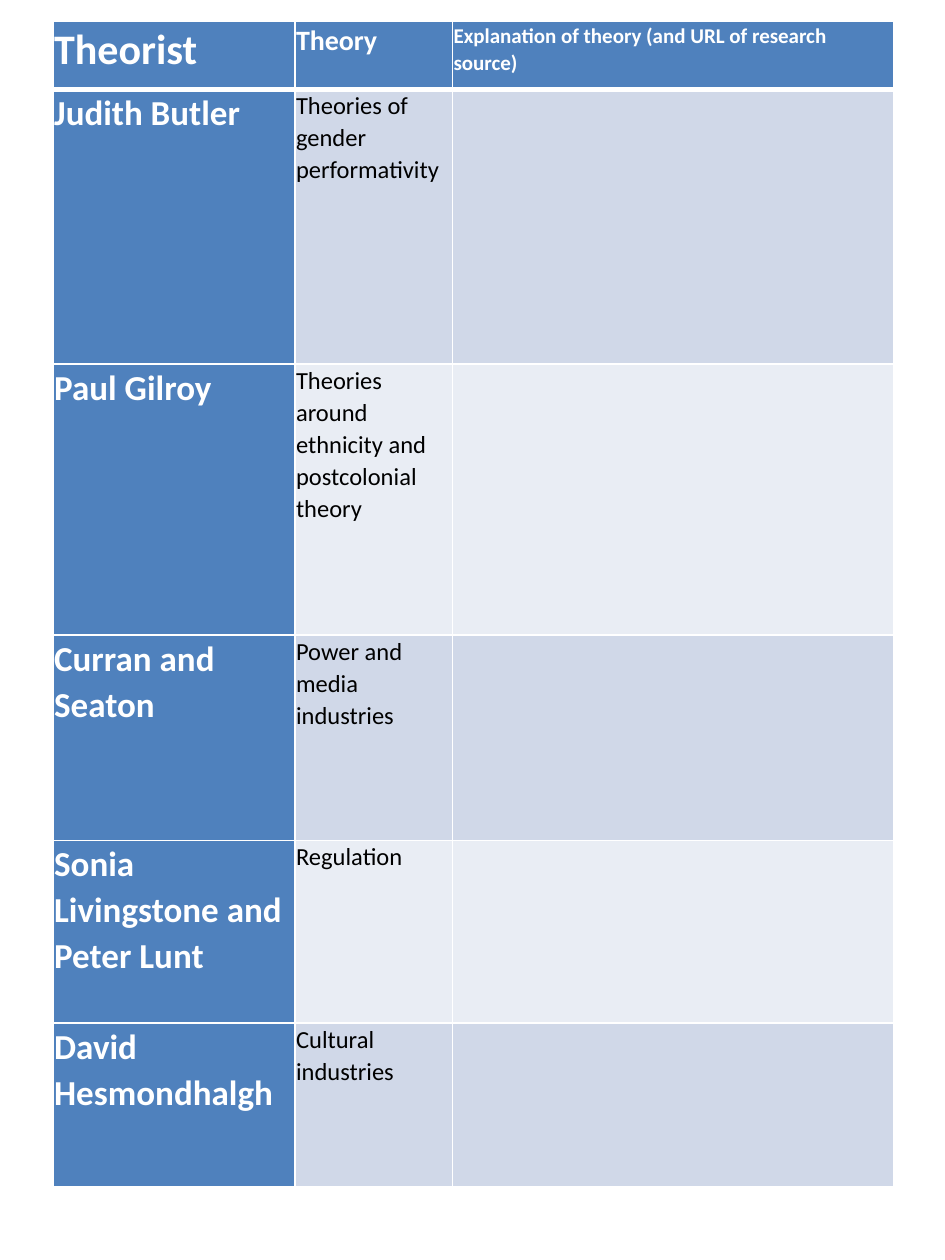
"""Build a one-slide table of media theorists and their theories."""
from dataclasses import dataclass

from lxml import etree
from pptx import Presentation
from pptx import util as u
from pptx.dml.color import RGBColor
from pptx.oxml.ns import qn

PX = 9144
WHITE, BLACK, BLUE = "FFFFFF", "000000", "4F81BD"
BANDS = ("D0D8E8", "E9EDF4")
COLUMN_WIDTHS = (192, 125, 350)


@dataclass(frozen=True)
class Style:
    """Look of the text in a cell."""
    size: int
    color: str = WHITE
    bold: bool = True


@dataclass(frozen=True)
class Entry:
    """One theorist with the theory and the row height."""
    theorist: str
    theory: str
    height: int


HEADINGS = (
    ("Theorist", Style(24)),
    ("Theory", Style(16)),
    ("Explanation of theory (and URL of research source)", Style(12)),
)
HEADING_HEIGHT = 54
NAME_STYLE = Style(20)
THEORY_STYLE = Style(14, BLACK, False)
ENTRIES = (
    Entry("Judith Butler", "Theories of gender performativity", 218),
    Entry("Paul Gilroy", "Theories around ethnicity and postcolonial theory", 215),
    Entry("Curran and Seaton", "Power and media industries", 163),
    Entry("Sonia Livingstone and Peter Lunt", "Regulation", 145),
    Entry("David Hesmondhalgh", "Cultural industries", 130),
)


def px(length: int) -> u.Emu:
    """Turn px into EMU."""
    return u.Emu(length * PX)


def rgb(color: str) -> RGBColor:
    """Turn a hex string into a colour."""
    return RGBColor.from_string(color)


def draw_borders(cell, top: int, bottom: int) -> None:
    """Draw white cell borders, with top and bottom widths in points."""
    properties = cell._tc.get_or_add_tcPr()
    for side, width in (("L", 1), ("R", 1), ("T", top), ("B", bottom)):
        line = etree.SubElement(properties, qn(f"a:ln{side}"), w=str(u.Pt(width)))
        fill = etree.SubElement(line, qn("a:solidFill"))
        etree.SubElement(fill, qn("a:srgbClr"), val=WHITE)


def draw_cell(cell, fill: str, top: int = 1, bottom: int = 1) -> None:
    """Give a cell its borders and background."""
    draw_borders(cell, top, bottom)
    cell.fill.solid()
    cell.fill.fore_color.rgb = rgb(fill)


def write_cell(cell, wording: str, style: Style) -> None:
    """Write one formatted run into a cell."""
    cell.margin_left = cell.margin_right = px(1)
    cell.margin_top = cell.margin_bottom = 0
    paragraph = cell.text_frame.paragraphs[0]
    paragraph.line_spacing = 1.07
    run = paragraph.add_run()
    run.text = wording
    run.font.name = "Calibri"
    run.font.size = u.Pt(style.size)
    run.font.bold = style.bold
    run.font.color.rgb = rgb(style.color)


def draw_theorists(slide) -> None:
    """Draw the whole table."""
    heights = (HEADING_HEIGHT, *(entry.height for entry in ENTRIES))
    theorists = slide.shapes.add_table(
        len(heights), len(COLUMN_WIDTHS), px(42), px(17),
        px(sum(COLUMN_WIDTHS)), px(sum(heights))).table
    for column, width in zip(theorists.columns, COLUMN_WIDTHS):
        column.width = px(width)
    for row, height in zip(theorists.rows, heights):
        row.height = px(height)

    for column, (heading, style) in enumerate(HEADINGS):
        cell = theorists.cell(0, column)
        draw_cell(cell, BLUE, bottom=3)
        write_cell(cell, heading, style)

    for index, entry in enumerate(ENTRIES):
        name, theory, explanation = theorists.rows[index + 1].cells
        band = BANDS[index % 2]
        for cell, fill in ((name, BLUE), (theory, band), (explanation, band)):
            draw_cell(cell, fill, top=1 if index else 3)
        write_cell(name, entry.theorist, NAME_STYLE)
        write_cell(theory, entry.theory, THEORY_STYLE)


def main() -> None:
    """Create and save the presentation."""
    presentation = Presentation()
    presentation.slide_width, presentation.slide_height = px(750), px(1000)
    draw_theorists(presentation.slides.add_slide(presentation.slide_layouts[6]))
    presentation.save("out.pptx")


if __name__ == "__main__":
    main()
